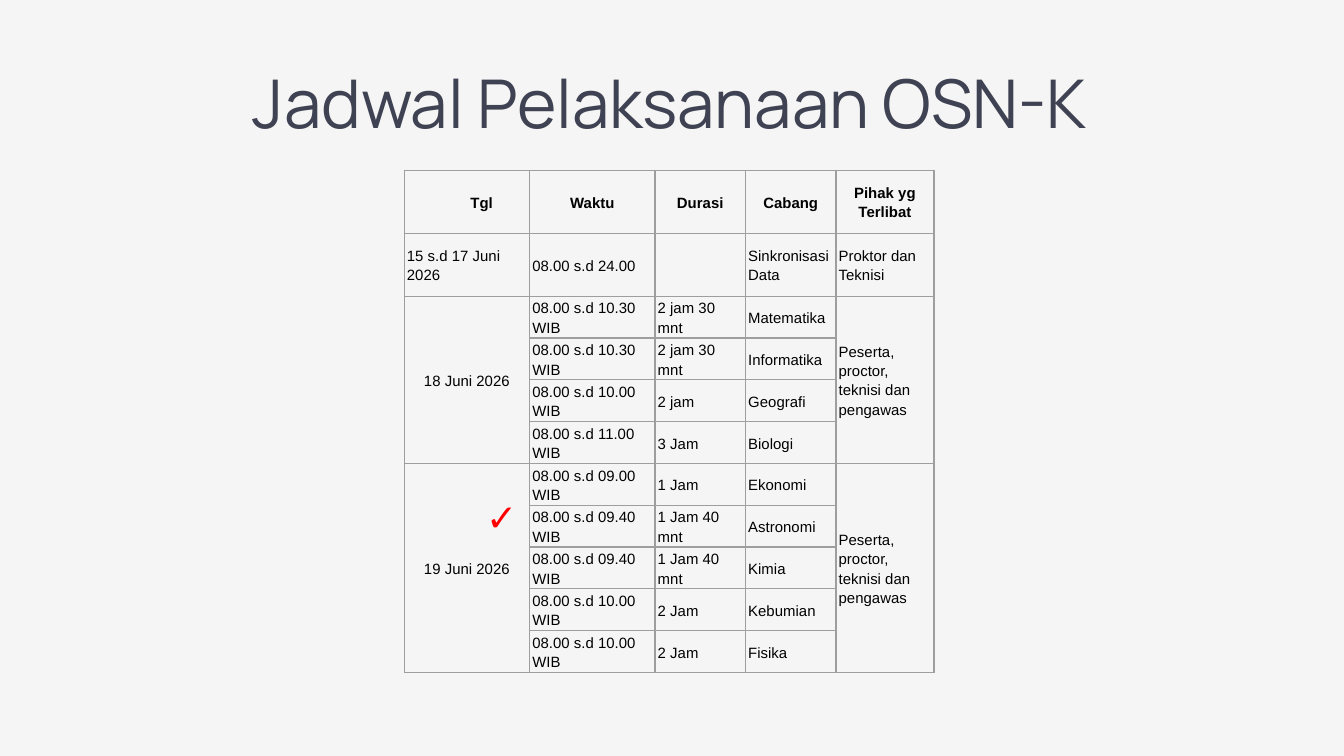
from dataclasses import dataclass

from lxml import etree
from pptx import Presentation
from pptx.dml.color import RGBColor
from pptx.enum.text import MSO_ANCHOR, MSO_AUTO_SIZE, PP_ALIGN
from pptx.oxml.ns import qn
from pptx.util import Cm, Pt

TOP, MIDDLE = MSO_ANCHOR.TOP, MSO_ANCHOR.MIDDLE
LEFT, CENTER, JUSTIFY = PP_ALIGN.LEFT, PP_ALIGN.CENTER, PP_ALIGN.JUSTIFY
NO_FIT = MSO_AUTO_SIZE.NONE
TITLE_ONLY = 5


@dataclass(frozen=True)
class Theme:
    background: str = "F5F5F5"
    title: str = "3F4252"
    text: str = "000000"
    border: str = "9E9E9E"
    check: str = "FF0000"
    title_font: str = "Manrope"
    body_font: str = "Arial"
    title_size: float = 36
    table_size: float = 8
    check_size: float = 20
    border_width: float = 0.75


@dataclass(frozen=True)
class Box:
    """A region of the page, in centimetres."""
    left: float
    top: float
    width: float
    height: float

    def lengths(self):
        return Cm(self.left), Cm(self.top), Cm(self.width), Cm(self.height)


THEME = Theme()

HEADER = ("Tgl", "Waktu", "Durasi", "Cabang", "Pihak yg Terlibat")
PARTICIPANTS = "Peserta, proctor, teknisi dan pengawas"
# Each day: date, people involved, sessions of (time, duration, subject)
DAYS = (
    ("15 s.d 17 Juni 2026", "Proktor dan Teknisi", (
        ("08.00 s.d 24.00", "", "Sinkronisasi Data"),
    )),
    ("18 Juni 2026", PARTICIPANTS, (
        ("08.00 s.d 10.30 WIB", "2 jam 30 mnt", "Matematika"),
        ("08.00 s.d 10.30 WIB", "2 jam 30 mnt", "Informatika"),
        ("08.00 s.d 10.00 WIB", "2 jam", "Geografi"),
        ("08.00 s.d 11.00 WIB", "3 Jam", "Biologi"),
    )),
    ("19 Juni 2026", PARTICIPANTS, (
        ("08.00 s.d 09.00 WIB", "1 Jam", "Ekonomi"),
        ("08.00 s.d 09.40 WIB", "1 Jam 40 mnt", "Astronomi"),
        ("08.00 s.d 09.40 WIB", "1 Jam 40 mnt", "Kimia"),
        ("08.00 s.d 10.00 WIB", "2 Jam", "Kebumian"),
        ("08.00 s.d 10.00 WIB", "2 Jam", "Fisika"),
    )),
)
COLUMN_SHARES = (2.37, 2.37, 1.71, 1.71, 1.85)
TALL_ROW, SESSION_ROW = 1.19, 0.79
TALL_ROWS = 2


def style_text(para, font, size, color, bold=False):
    for span in para.runs:
        span.font.name = font
        span.font.size = Pt(size)
        span.font.bold = bold
        span.font.color.rgb = RGBColor.from_string(color)


def set_borders(cell):
    properties = cell._tc.get_or_add_tcPr()
    for side in ("a:lnL", "a:lnR", "a:lnT", "a:lnB"):
        line = etree.SubElement(properties, qn(side), w=str(Pt(THEME.border_width)))
        fill = etree.SubElement(line, qn("a:solidFill"))
        etree.SubElement(fill, qn("a:srgbClr"), val=THEME.border)


def fill_cell(cell, text, align=LEFT, bold=False):
    cell.text_frame.text = text
    para = cell.text_frame.paragraphs[0]
    para.alignment = align
    para.line_spacing = 1.15
    style_text(para, THEME.body_font, THEME.table_size, THEME.text, bold)


def add_title(page, box):
    title = page.shapes.title
    title.left, title.top, title.width, title.height = box.lengths()
    frame = title.text_frame
    frame.text = "Jadwal Pelaksanaan OSN-K"
    frame.word_wrap = True
    frame.auto_size = NO_FIT
    frame.vertical_anchor = TOP
    frame.margin_left = frame.margin_right = Cm(0.25)
    frame.margin_top = frame.margin_bottom = Cm(0.25)
    para = frame.paragraphs[0]
    para.alignment = CENTER
    style_text(para, THEME.title_font, THEME.title_size, THEME.title)


def add_schedule(page, box):
    row_count = 1 + sum(len(sessions) for _, _, sessions in DAYS)
    table = page.shapes.add_table(row_count, len(HEADER), *box.lengths()).table
    table.first_row = table.horz_banding = False
    for column, share in zip(table.columns, COLUMN_SHARES):
        column.width = Cm(box.width * share / sum(COLUMN_SHARES))
    for index, row in enumerate(table.rows):
        row.height = Cm(TALL_ROW if index < TALL_ROWS else SESSION_ROW)
    for cell in table.iter_cells():
        cell.vertical_anchor = MIDDLE
        cell.margin_left = cell.margin_right = Cm(0.05)
        cell.margin_top = cell.margin_bottom = 0
        set_borders(cell)
        cell.fill.background()

    for column, label in enumerate(HEADER):
        fill_cell(table.cell(0, column), label, CENTER if column else JUSTIFY, bold=True)
    date_heading = table.cell(0, 0).text_frame.paragraphs[0]
    date_heading._p.get_or_add_pPr().set("indent", str(Cm(1.2)))

    first, last_column = 1, len(HEADER) - 1
    for date, people, sessions in DAYS:
        several = len(sessions) > 1
        if several:
            for column in (0, last_column):
                last = table.cell(first + len(sessions) - 1, column)
                table.cell(first, column).merge(last)
        fill_cell(table.cell(first, 0), date, CENTER if several else LEFT)
        fill_cell(table.cell(first, last_column), people)
        for row, session in enumerate(sessions, first):
            for column, text in enumerate(session, 1):
                fill_cell(table.cell(row, column), text)
        first += len(sessions)


def add_check_mark(page, box):
    frame = page.shapes.add_textbox(*box.lengths()).text_frame
    frame.text = "✓"
    frame.word_wrap = True
    style_text(frame.paragraphs[0], THEME.body_font, THEME.check_size, THEME.check, bold=True)


def main():
    deck = Presentation()
    deck.slide_width, deck.slide_height = Cm(25.4), Cm(14.29)
    page = deck.slides.add_slide(deck.slide_layouts[TITLE_ONLY])
    page.background.fill.solid()
    page.background.fill.fore_color.rgb = RGBColor.from_string(THEME.background)
    add_title(page, Box(1.4, 0.91, 22.53, 1.6))
    add_schedule(page, Box(7.64, 3.22, 10.01, 9.49))
    add_check_mark(page, Box(8.94, 9.22, 1.04, 1.12))
    deck.save("out.pptx")


if __name__ == "__main__":
    main()
